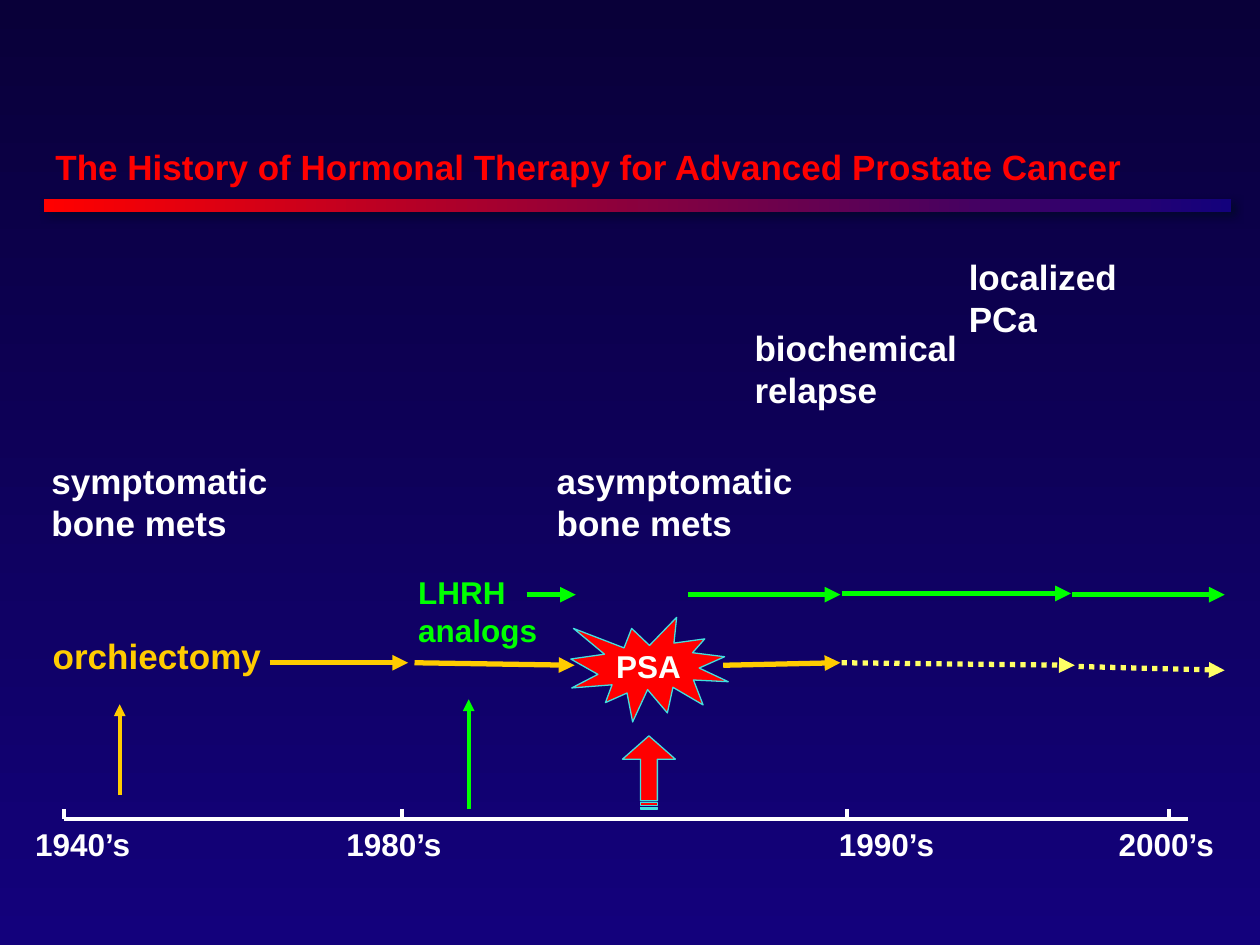
from lxml import etree
from pptx import Presentation
from pptx import util as u
from pptx.dml.color import RGBColor
from pptx.enum import dml, shapes, text
from pptx.oxml.ns import qn

RED, GOLD, GREEN, YELLOW = "FF0000", "FFCC00", "00FF00", "FFFF66"
WHITE, SEAL_WHITE, TEAL, NAVY, DARK = "FFFFFF", "FDFFFB", "42E0DD", "13017C", "090039"
AXIS_Y = 6.5
TICK_TOP = 6.42


def rgb(value):
    return RGBColor.from_string(value)


def add_run(paragraph, words, size, color):
    run = paragraph.add_run()
    run.text = words
    run.font.size = u.Pt(size)
    run.font.name = "Arial"
    run.font.bold = True
    run.font.color.rgb = rgb(color)


def add_label(slide, left, top, width, height, lines, size=20, color=WHITE, wrap=True):
    label = slide.shapes.add_textbox(*map(u.Inches, (left, top, width, height)))
    frame = label.text_frame
    frame.word_wrap = wrap
    for index, line in enumerate(lines):
        paragraph = frame.add_paragraph() if index else frame.paragraphs[0]
        add_run(paragraph, line, size, color)


def add_line(slide, start, end, color, weight=2.25, arrow=False, dotted=False):
    line = slide.shapes.add_connector(
        shapes.MSO_CONNECTOR.STRAIGHT, *map(u.Inches, (*start, *end)))
    line.line.color.rgb = rgb(color)
    line.line.width = u.Pt(weight)
    if dotted:
        line.line.dash_style = dml.MSO_LINE.ROUND_DOT
    properties = line._element.spPr
    if arrow:
        etree.SubElement(properties.find(qn("a:ln")), qn("a:tailEnd"), type="triangle")
    etree.SubElement(properties, qn("a:effectLst"))


def add_red_shape(slide, preset, left, top, width, height):
    shape = slide.shapes.add_shape(preset, *map(u.Inches, (left, top, width, height)))
    shape.shadow.inherit = False
    shape.fill.solid()
    shape.fill.fore_color.rgb = rgb(RED)
    shape.line.color.rgb = rgb(TEAL)
    shape.line.width = u.Pt(0.75)
    return shape


def set_gradient(fill, first, last, angle):
    fill.gradient()
    fill.gradient_angle = angle
    for stop, color in zip(fill.gradient_stops, (first, last)):
        stop.color.rgb = rgb(color)


def add_heading(slide):
    title = slide.shapes.title
    title.left, title.top, title.width, title.height = map(
        u.Inches, (0.34, 0.71, 9.34, 0.83))
    frame = title.text_frame
    frame.vertical_anchor = text.MSO_ANCHOR.BOTTOM
    paragraph = frame.paragraphs[0]
    paragraph.alignment = text.PP_ALIGN.LEFT
    paragraph.line_spacing = 0.9
    add_run(paragraph, "The History of Hormonal Therapy for Advanced Prostate Cancer", 20, RED)

    # Fading rule with a soft shadow
    rule = slide.shapes.add_shape(
        shapes.MSO_SHAPE.RECTANGLE, *map(u.Inches, (0.35, 1.58, 9.42, 0.1)))
    set_gradient(rule.fill, RED, NAVY, 0)
    rule.line.fill.background()
    rule.shadow.inherit = False
    shadow = etree.SubElement(
        rule._element.spPr.find(qn("a:effectLst")), qn("a:outerShdw"),
        blurRad=str(u.Pt(5)), dist=str(u.Pt(3)), dir="2700000")
    shade = etree.SubElement(shadow, qn("a:srgbClr"), val="000B26")
    etree.SubElement(shade, qn("a:alpha"), val="75000")


def add_timeline(slide):
    add_line(slide, (0.51, AXIS_Y), (9.43, AXIS_Y), WHITE)
    for tick, left, width, decade in (
            (0.51, 0.18, 1.17, "1940’s"), (3.19, 2.65, 1.17, "1980’s"),
            (6.72, 6.56, 1.17, "1990’s"), (9.28, 8.78, 0.99, "2000’s")):
        add_line(slide, (tick, TICK_TOP), (tick, AXIS_Y), WHITE)
        add_label(slide, left, AXIS_Y, width, 0.4, [decade], 18)


def add_stages(slide):
    add_label(slide, 0.31, 3.6, 2.33, 0.77, ["symptomatic bone mets"])
    add_label(slide, 4.32, 3.6, 2.25, 0.77, ["asymptomatic", "bone mets"])
    add_label(slide, 5.89, 2.54, 2.42, 0.77, ["biochemical relapse"])
    add_label(slide, 7.59, 1.98, 1.99, 0.43, ["localized PCa"], wrap=False)


def add_treatments(slide):
    add_label(slide, 0.32, 4.99, 2.1, 0.43, ["orchiectomy"], color=GOLD)
    add_label(slide, 3.22, 4.5, 1.25, 0.7, ["LHRH analogs"], 18, GREEN)

    # Start of each treatment on the timeline
    add_line(slide, (0.95, 6.31), (0.95, 5.59), GOLD, arrow=True)
    add_line(slide, (3.72, TICK_TOP), (3.72, 5.55), GREEN, arrow=True)

    # Continued use: LHRH analogs, then orchiectomy
    for x1, x2, y in ((4.18, 4.57, 4.72), (5.46, 6.67, 4.72),
                      (6.68, 8.5, 4.71), (8.51, 9.72, 4.72)):
        add_line(slide, (x1, y), (x2, y), GREEN, 3, arrow=True)
    for start, end in (((2.14, 5.26), (3.24, 5.26)), ((3.29, 5.26), (4.56, 5.28)),
                       ((5.74, 5.28), (6.67, 5.26))):
        add_line(slide, start, end, GOLD, 3, arrow=True)
    for start, end in (((6.68, 5.26), (8.53, 5.28)), ((8.56, 5.29), (9.72, 5.32))):
        add_line(slide, start, end, YELLOW, 3, arrow=True, dotted=True)


def add_psa(slide):
    pointer = add_red_shape(
        slide, shapes.MSO_SHAPE.STRIPED_RIGHT_ARROW, 4.86, 5.92, 0.58, 0.42)
    pointer.rotation = 270
    pointer.adjustments[0] = 0.32
    pointer.adjustments[1] = 0.44

    burst = add_red_shape(slide, shapes.MSO_SHAPE.EXPLOSION1, 4.53, 4.9, 1.25, 0.83)
    frame = burst.text_frame
    frame.word_wrap = False
    frame.vertical_anchor = text.MSO_ANCHOR.MIDDLE
    frame.paragraphs[0].alignment = text.PP_ALIGN.CENTER
    add_run(frame.paragraphs[0], "PSA", 18, SEAL_WHITE)


def main():
    deck = Presentation()
    deck.slide_width, deck.slide_height = u.Inches(10), u.Inches(7.5)
    slide = deck.slides.add_slide(deck.slide_layouts[5])
    set_gradient(slide.background.fill, DARK, NAVY, 270)
    add_heading(slide)
    add_stages(slide)
    add_timeline(slide)
    add_treatments(slide)
    add_psa(slide)
    deck.save("out.pptx")


if __name__ == "__main__":
    main()
